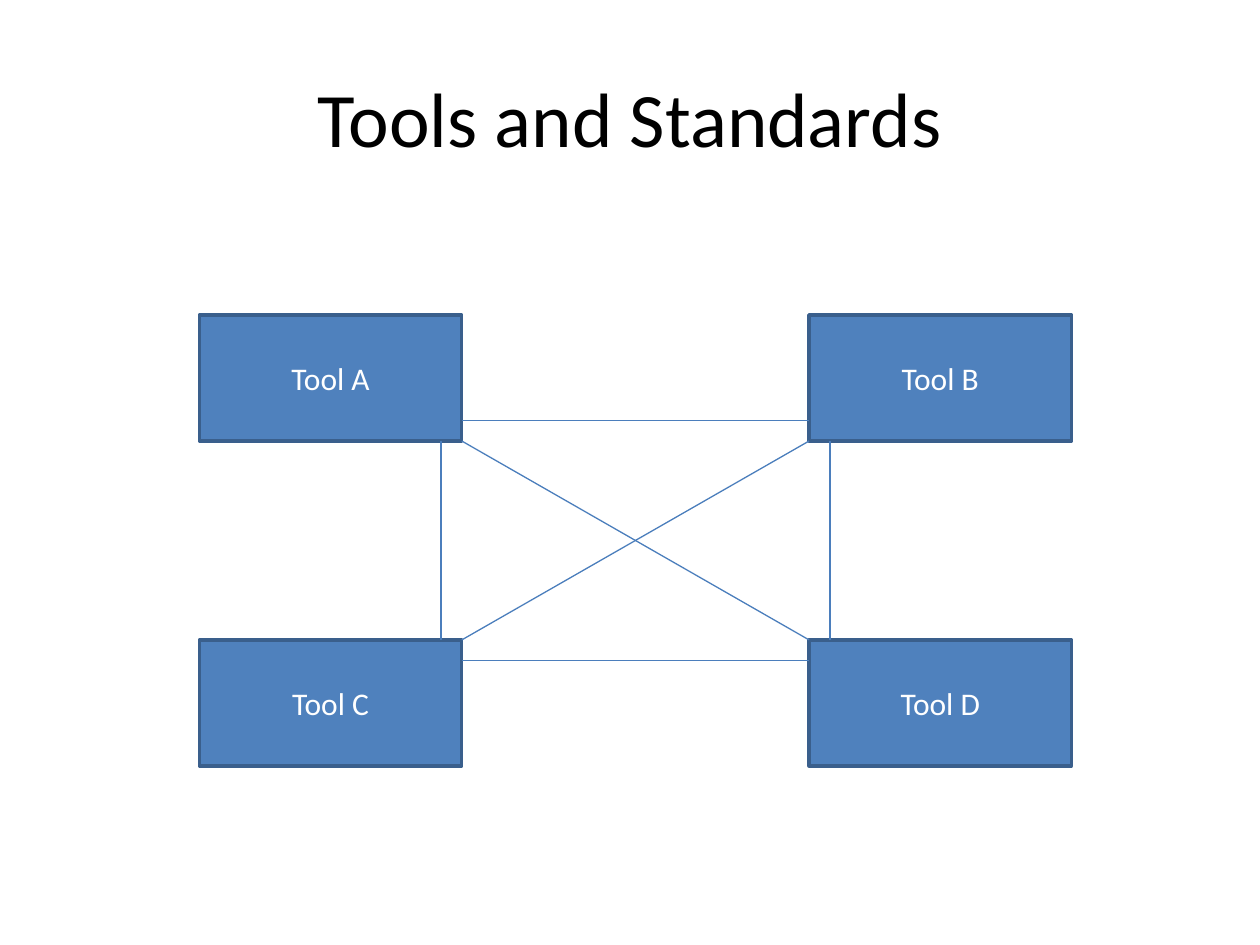
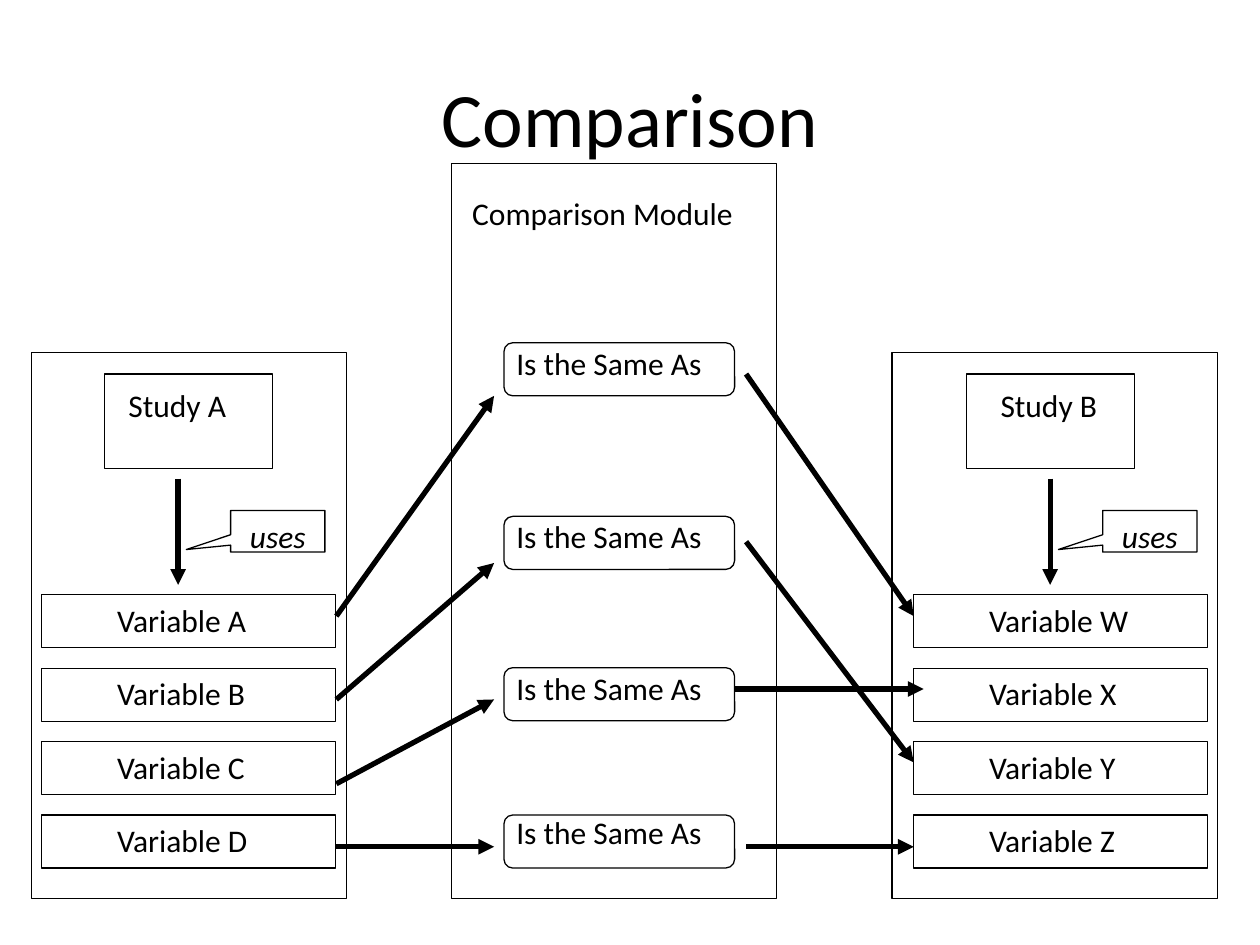
from lxml import etree
from pptx import Presentation
from pptx.dml.color import RGBColor
from pptx.enum.shapes import MSO_CONNECTOR, MSO_SHAPE
from pptx.enum.text import MSO_ANCHOR, PP_ALIGN
from pptx.oxml.ns import qn
from pptx.util import Cm, Pt

COLORS = {"ink": "000000", "paper": "FFFFFF", "tool": "4F81BD",
          "tool_edge": "3A5F8C", "tool_link": "4B7EBC"}
FONT = "Calibri"


def add_box(slide, kind, left, top, width, height, text="", size=18, ink="ink",
            fill=None, edge="ink", weight=0.75,
            align=PP_ALIGN.LEFT, anchor=MSO_ANCHOR.TOP):
    """Add a preset shape, or a plain text box when kind is None."""
    frame = [Cm(v) for v in (left, top, width, height)]
    if kind is None:
        box = slide.shapes.add_textbox(*frame)
    else:
        box = slide.shapes.add_shape(kind, *frame)
        box.shadow.inherit = False
        if fill:
            box.fill.solid()
            box.fill.fore_color.rgb = RGBColor.from_string(COLORS[fill])
        else:
            box.fill.background()
        box.line.color.rgb = RGBColor.from_string(COLORS[edge])
        box.line.width = Pt(weight)
    if text:
        box.text_frame.text = text
        box.text_frame.word_wrap = True
        box.text_frame.vertical_anchor = anchor
        paragraph = box.text_frame.paragraphs[0]
        paragraph.alignment = align
        font = paragraph.runs[0].font
        font.name, font.size = FONT, Pt(size)
        font.color.rgb = RGBColor.from_string(COLORS[ink])
    return box


def add_link(slide, start, end, color="ink", weight=3, arrow=True):
    link = slide.shapes.add_connector(
        MSO_CONNECTOR.STRAIGHT, *[Cm(v) for v in (*start, *end)])
    link.line.color.rgb = RGBColor.from_string(COLORS[color])
    link.line.width = Pt(weight)
    if arrow:
        etree.SubElement(link.line._get_or_add_ln(), qn("a:tailEnd"), type="triangle")
    etree.SubElement(link._element.spPr, qn("a:effectLst"))


deck = Presentation()
deck.slide_width, deck.slide_height = Cm(25.4), Cm(19.05)

# Slides and their shared title style
slides = []
for title in ("Tools and Standards", "Comparison"):
    slide = deck.slides.add_slide(deck.slide_layouts[6])
    add_box(slide, None, 1.27, 0.76, 22.86, 3.18, title, size=44,
            align=PP_ALIGN.CENTER, anchor=MSO_ANCHOR.MIDDLE)
    slides.append(slide)
tools, comparison = slides

# Tools: four boxes in a 2 x 2 grid
tool_width, tool_height = 5.29, 2.54
west, east, north, south = 4.02, 16.31, 6.35, 12.9
for name, left, top in (("Tool A", west, north), ("Tool B", east, north),
                        ("Tool D", east, south), ("Tool C", west, south)):
    add_box(tools, MSO_SHAPE.RECTANGLE, left, top, tool_width, tool_height, name,
            ink="paper", fill="tool", edge="tool_edge", weight=2,
            align=PP_ALIGN.CENTER, anchor=MSO_ANCHOR.MIDDLE)

# Tools: every box linked to every other, side links set in from the corners
inner_west, inner_north, inset = west + tool_width, north + tool_height, 0.42
for y in (inner_north - inset, south + inset):
    add_link(tools, (inner_west, y), (east, y), "tool_link", 0.75, arrow=False)
for x in (inner_west - inset, east + inset):
    add_link(tools, (x, inner_north), (x, south), "tool_link", 0.75, arrow=False)
for y_start, y_end in ((inner_north, south), (south, inner_north)):
    add_link(tools, (inner_west, y_start), (east, y_end), "tool_link", 0.75, arrow=False)

# Comparison: the two studies with their variables
row_height, row_step, first_row = 1.07, 1.48, 11.99
studies = (
    # name, panel left, panel width, study box left, variables left, letters
    ("Study A", 0.64, 6.35, 2.11, 0.84, "ABCD"),
    ("Study B", 17.98, 6.56, 19.48, 18.42, "WXYZ"),
)
for study, panel_left, panel_width, study_left, rows_left, letters in studies:
    add_box(comparison, MSO_SHAPE.RECTANGLE, panel_left, 7.11, panel_width, 11)
    add_box(comparison, MSO_SHAPE.RECTANGLE, study_left, 7.54, 3.39, 1.9)
    add_box(comparison, None, rows_left + 1.5, 7.65, 2.74, 1.02, study)
    for row, letter in enumerate(letters):
        top = first_row + row * row_step
        add_box(comparison, MSO_SHAPE.RECTANGLE, rows_left, top, 5.92, row_height)
        add_box(comparison, None, rows_left + 1.27, top, 3.6, 1.02, f"Variable {letter}")
    arrow_x = rows_left + 2.75
    add_link(comparison, (arrow_x, 9.65), (arrow_x, 11.79))
    uses = add_box(comparison, MSO_SHAPE.RECTANGULAR_CALLOUT, rows_left + 3.81, 10.29,
                   1.9, 0.84, "uses", align=PP_ALIGN.CENTER)
    uses.adjustments[0], uses.adjustments[1] = -0.97, 0.44
    uses.text_frame.paragraphs[0].runs[0].font.italic = True

# Comparison: the module in the middle
add_box(comparison, MSO_SHAPE.RECTANGLE, 9.1, 3.3, 6.56, 14.81)
add_box(comparison, None, 9.27, 3.78, 6.2, 1.02, "Comparison Module")

# Comparison: each match with its arrow in and its arrow out
matches = (
    # box top, label top, arrow in, arrow out
    (6.91, 6.81, ((6.78, 12.42), (9.96, 7.98)), ((15.04, 7.54), (18.42, 12.42))),
    (10.41, 10.29, ((6.78, 14.1), (9.96, 11.35)), ((15.04, 10.92), (18.42, 15.37))),
    (13.46, 13.36, ((6.78, 15.8), (9.96, 14.1)), ((14.81, 13.89), (18.62, 13.89))),
    (16.43, 16.26, ((6.78, 17.07), (9.96, 17.07)), ((15.04, 17.07), (18.42, 17.07))),
)
for box_top, label_top, arrow_in, arrow_out in matches:
    add_link(comparison, *arrow_in)
    add_box(comparison, MSO_SHAPE.ROUNDED_RECTANGLE, 10.16, box_top, 4.65, row_height)
    add_box(comparison, None, 10.16, label_top, 4.83, 1.02, "Is the Same As")
    add_link(comparison, *arrow_out)

deck.save("out.pptx")
